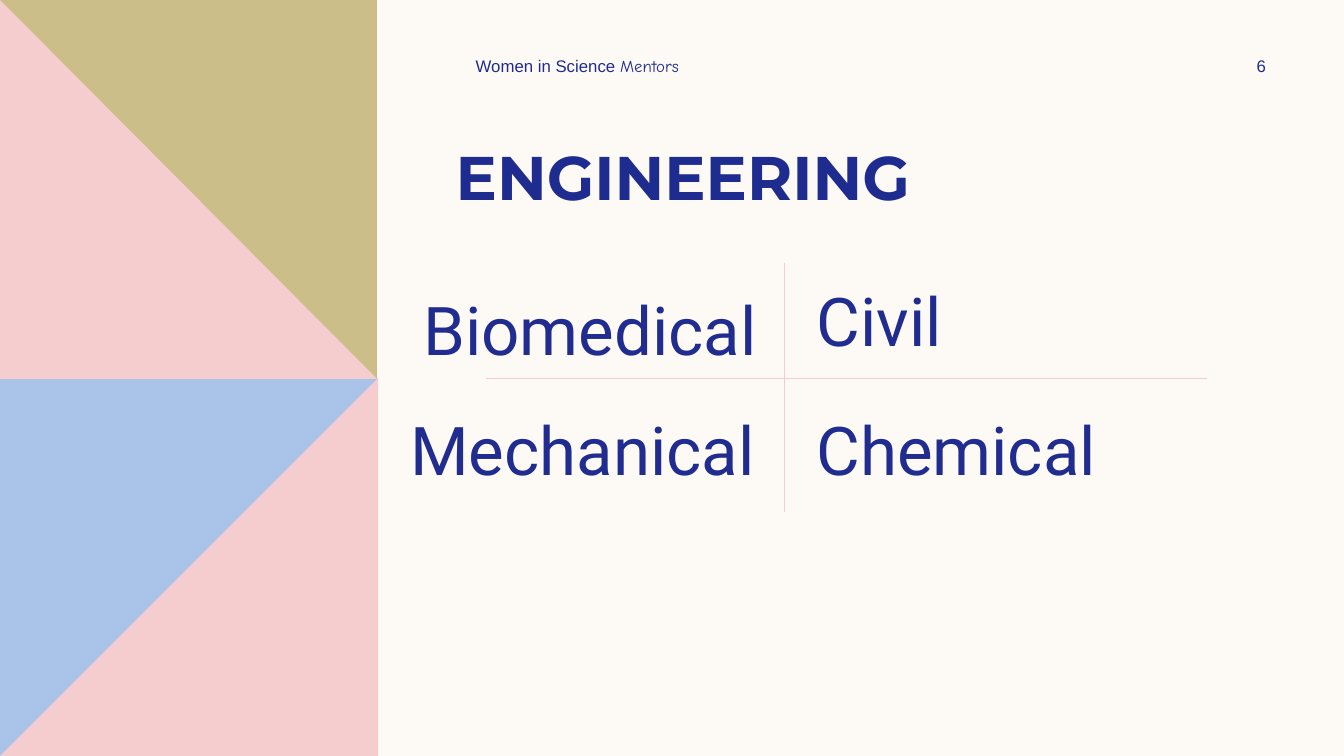
import pptx
import pptx.util
import pptx.dml.color
import pptx.enum.shapes
import pptx.enum.text
import pptx.oxml

W, H = 13.33, 7.5
MID = H / 2
NAVY, INK, PINK = "1F2C8F", "202C8F", "F5CDCE"

TITLE = "ENGINEERING"
HEADER = [("Women in Science ", "Arial"), ("Mentors", "Comic Neue")]
PAGE = "6"
# Field of engineering: left, top, width
FIELDS = [
    ("Biomedical", 4.1, 2.81, 3.6),
    ("Civil", 8, 2.72, 4.15),
    ("Mechanical", 3.97, 4, 3.73),
    ("Chemical", 8, 4, 3.43),
]
# Side panel: each square tile is covered by a triangle
TOP_W, TOP_H = 3.74, 3.76
PANEL = [
    ("AAC3E8", [(0, MID), (MID, MID), (MID, H), (0, H)]),
    (PINK, [(MID, MID), (MID, H), (0, H)]),
    ("CCBE89", [(0, 0), (TOP_W, 0), (TOP_W, TOP_H), (0, TOP_H)]),
    (PINK, [(0, 0), (TOP_W, TOP_H), (0, TOP_H)]),
]
# Cross between the four fields: x1, y1, x2, y2
CROSS = [(4.82, MID, 11.97, MID), (7.78, 2.61, 7.78, 5.08)]

inch = pptx.util.Inches
ALIGN = pptx.enum.text.PP_ALIGN
ANCHOR = pptx.enum.text.MSO_ANCHOR
AUTO = pptx.enum.text.MSO_AUTO_SIZE


def rgb(value):
    return pptx.dml.color.RGBColor.from_string(value)


def add_text(sp, runs, size, color=NAVY, bold=False, align=ALIGN.LEFT,
             anchor=ANCHOR.MIDDLE, fit=AUTO.NONE):
    """Write (text, font) runs as one paragraph."""
    tf = sp.text_frame
    tf.word_wrap = True
    tf.auto_size = fit
    tf.vertical_anchor = anchor
    p = tf.paragraphs[0]
    p.alignment = align
    for text, font in runs:
        r = p.add_run()
        r.text = text
        r.font.name = font
        r.font.size = pptx.util.Pt(size)
        r.font.bold = bold
        r.font.color.rgb = rgb(color)


def add_box(left, top, width, height, runs, size, **fmt):
    sp = s.shapes.add_textbox(inch(left), inch(top), inch(width), inch(height))
    add_text(sp, runs, size, **fmt)


prs = pptx.Presentation()
prs.slide_width, prs.slide_height = inch(W), inch(H)
s = prs.slides.add_slide(prs.slide_layouts[5])
s.background.fill.solid()
s.background.fill.fore_color.rgb = rgb("FDFAF6")

# Side panel
for color, points in PANEL:
    corners = [(inch(x), inch(y)) for x, y in points]
    outline = s.shapes.build_freeform(*corners[0])
    outline.add_line_segments(corners[1:], close=True)
    sp = outline.convert_to_shape()
    sp.shadow.inherit = False
    sp.fill.solid()
    sp.fill.fore_color.rgb = rgb(color)
    sp.line.fill.background()

# Title
title = s.shapes.title
title.left, title.top, title.width, title.height = map(inch, (4.42, 1.32, 7.4, 0.84))
add_text(title, [(TITLE, "Montserrat")], 44, bold=True)

# Header and page number
add_box(4.62, 0.5, 3.5, 0.3, HEADER, 12)
add_box(11.97, 0.5, 1.08, 0.3, [(PAGE, "Arial")], 12, align=ALIGN.CENTER)

# Cross
for x1, y1, x2, y2 in CROSS:
    line = s.shapes.add_connector(pptx.enum.shapes.MSO_CONNECTOR.STRAIGHT,
                                  inch(x1), inch(y1), inch(x2), inch(y2))
    line.line.color.rgb = rgb(PINK)
    line.line.width = pptx.util.Pt(0.5)
    line._element.spPr.append(pptx.oxml.parse_xml(
        '<a:effectLst xmlns:a="http://schemas.openxmlformats.org/drawingml/2006/main"/>'))

# Fields
for name, left, top, width in FIELDS:
    add_box(left, top, width, 0.91, [(name, "Roboto")], 48, color=INK,
            anchor=ANCHOR.TOP, fit=AUTO.SHAPE_TO_FIT_TEXT)

prs.save("out.pptx")
